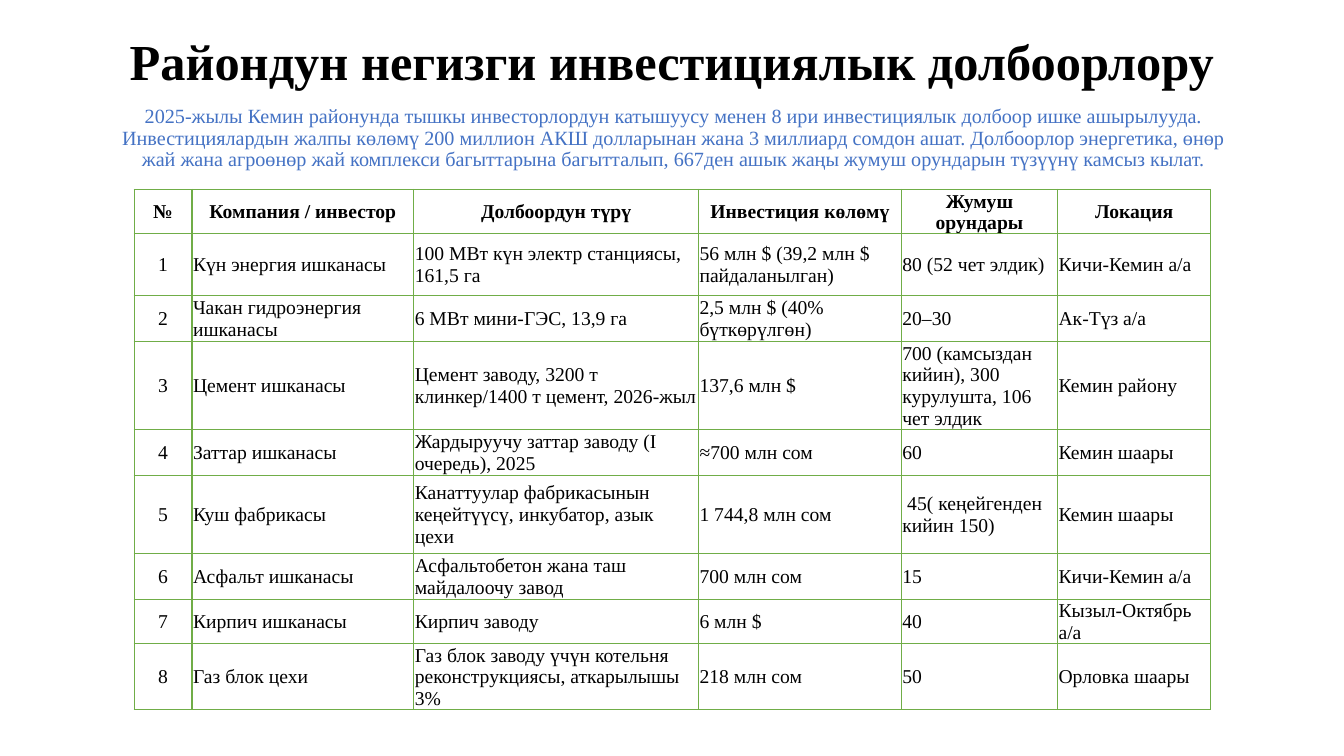
import pptx
import pptx.dml.color
import pptx.enum.text
import pptx.oxml
import pptx.oxml.ns
import pptx.util

Pt = pptx.util.Pt
ALIGN = pptx.enum.text.PP_ALIGN
MIDDLE = pptx.enum.text.MSO_ANCHOR.MIDDLE
FONT = "Times New Roman"
BLACK, BLUE, GREEN = "000000", "4472C4", "70AD47"

TITLE = "Райондун негизги инвестициялык долбоорлору"
SUMMARY = (
    "2025-жылы Кемин районунда тышкы инвесторлордун катышуусу менен 8 ири "
    "инвестициялык долбоор ишке ашырылууда.\v"
    "Инвестициялардын жалпы көлөмү 200 миллион АКШ долларынан жана 3 миллиард "
    "сомдон ашат. Долбоорлор энергетика, өнөр жай жана агроөнөр жай комплекси "
    "багыттарына багытталып, 667ден ашык жаңы жумуш орундарын түзүүнү камсыз кылат."
)
HEADER = ["№", "Компания / инвестор", "Долбоордун түрү", "Инвестиция көлөмү",
          "Жумуш орундары", "Локация"]
PROJECTS = [
    ["Күн энергия ишканасы", "100 МВт күн электр станциясы, 161,5 га",
     "56 млн $ (39,2 млн $ пайдаланылган)", "80 (52 чет элдик)", "Кичи-Кемин а/а"],
    ["Чакан гидроэнергия ишканасы", "6 МВт мини-ГЭС, 13,9 га",
     "2,5 млн $ (40% бүткөрүлгөн)", "20–30", "Ак-Түз а/а"],
    ["Цемент ишканасы", "Цемент заводу, 3200 т клинкер/1400 т цемент, 2026-жыл",
     "137,6 млн $", "700 (камсыздан кийин), 300 курулушта, 106 чет элдик",
     "Кемин району"],
    ["Заттар ишканасы", "Жардыруучу заттар заводу (I очередь), 2025",
     "≈700 млн сом", "60", "Кемин шаары"],
    ["Куш фабрикасы", "Канаттуулар фабрикасынын кеңейтүүсү, инкубатор, азык цехи",
     "1 744,8 млн сом", " 45( кеңейгенден кийин 150)", "Кемин шаары"],
    ["Асфальт ишканасы", "Асфальтобетон жана таш майдалоочу завод",
     "700 млн сом", "15", "Кичи-Кемин а/а"],
    ["Кирпич ишканасы", "Кирпич заводу", "6 млн $", "40", "Кызыл-Октябрь а/а"],
    ["Газ блок цехи", "Газ блок заводу үчүн котельня реконструкциясы, аткарылышы 3%",
     "218 млн сом", "50", "Орловка шаары"],
]
COLUMN_WIDTHS = [41.4, 158.4, 203.4, 144.9, 111.6, 109.4]
ROW_HEIGHTS = [22.3, 43.9, 33.1, 55.4, 33.1, 55.4, 33.1, 22.3, 43.9]
CELL_FORMAT = {"vertical_anchor": MIDDLE, "margin_left": Pt(0.7), "margin_right": Pt(0.7),
               "margin_top": Pt(0.7), "margin_bottom": Pt(0)}


def rgb(value):
    return pptx.dml.color.RGBColor.from_string(value)


def set_attributes(obj, values):
    for name, value in values.items():
        setattr(obj, name, value)


def write(tf, text, size, color=BLACK, bold=False, align=ALIGN.CENTER, spacing=None):
    """Fill a text frame with one formatted paragraph."""
    tf.text = text
    p = tf.paragraphs[0]
    set_attributes(p, {"alignment": align, "line_spacing": spacing})
    for r in p.runs:
        set_attributes(r.font, {"name": FONT, "size": Pt(size), "bold": bold})
        r.font.color.rgb = rgb(color)


def place_text(sp, left, top, width, height, text, **style):
    """Position a text shape and write centred, tightly spaced text in it."""
    set_attributes(sp, {"left": Pt(left), "top": Pt(top),
                        "width": Pt(width), "height": Pt(height)})
    set_attributes(sp.text_frame, {"word_wrap": True, "vertical_anchor": MIDDLE,
                                   "auto_size": pptx.enum.text.MSO_AUTO_SIZE.NONE})
    write(sp.text_frame, text, spacing=0.9, **style)


def add_borders(cell, color, width):
    tc_pr = cell._tc.get_or_add_tcPr()
    for i, side in enumerate("LRTB"):
        tc_pr.insert(i, pptx.oxml.parse_xml(
            f'<a:ln{side} {pptx.oxml.ns.nsdecls("a")} w="{Pt(width)}">'
            f'<a:solidFill><a:srgbClr val="{color}"/></a:solidFill></a:ln{side}>'))


def add_projects_table(s):
    rows = [HEADER] + [[str(i), *project] for i, project in enumerate(PROJECTS, 1)]
    table = s.shapes.add_table(len(rows), len(HEADER), Pt(95.8), Pt(135.4),
                               Pt(sum(COLUMN_WIDTHS)), Pt(sum(ROW_HEIGHTS))).table
    set_attributes(table, {"first_row": False, "horz_banding": False})
    for column, width in zip(table.columns, COLUMN_WIDTHS):
        column.width = Pt(width)
    for row, height in zip(table.rows, ROW_HEIGHTS):
        row.height = Pt(height)
    for i, texts in enumerate(rows):
        for j, text in enumerate(texts):
            cell = table.cell(i, j)
            set_attributes(cell, CELL_FORMAT)
            cell.fill.background()
            add_borders(cell, GREEN, 1)
            align = ALIGN.CENTER if i == 0 or j == 0 else ALIGN.LEFT
            write(cell.text_frame, text, 14, bold=i == 0, align=align)


def main():
    prs = pptx.Presentation()
    set_attributes(prs, {"slide_width": Pt(960), "slide_height": Pt(540)})
    s = prs.slides.add_slide(prs.slide_layouts[5])
    place_text(s.shapes.title, 66, 16, 828, 60, TITLE, size=36, bold=True)
    summary = s.shapes.add_textbox(0, 0, 0, 0)
    place_text(summary, 67, 63, 828, 72, SUMMARY, size=14.4, color=BLUE)
    add_projects_table(s)
    prs.save("out.pptx")


if __name__ == "__main__":
    main()
